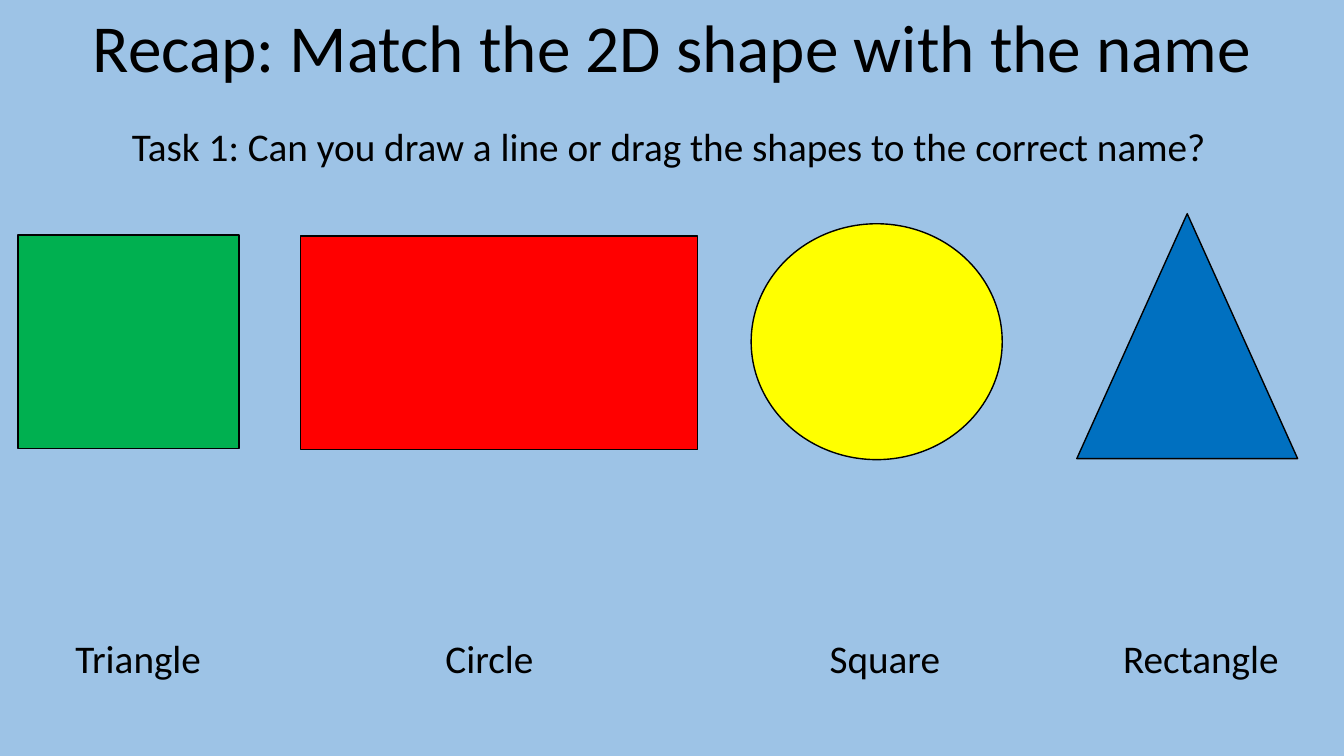
from dataclasses import dataclass

from pptx import Presentation
from pptx.dml.color import RGBColor
from pptx.enum.shapes import MSO_SHAPE
from pptx.enum.text import MSO_ANCHOR, MSO_AUTO_SIZE, PP_ALIGN
from pptx.util import Inches, Pt


@dataclass(frozen=True)
class Theme:
    font: str = "Calibri"
    title_size: int = 48
    text_size: int = 28
    outline_width: int = 1
    background: str = "9DC3E6"
    ink: str = "000000"
    green: str = "00B050"
    red: str = "FF0000"
    yellow: str = "FFFF00"
    blue: str = "0070C0"


class SlideBuilder:
    def __init__(self, slide, theme):
        self.slide = slide
        self.theme = theme

    def paint_background(self):
        fill = self.slide.background.fill
        fill.solid()
        fill.fore_color.rgb = RGBColor.from_string(self.theme.background)

    def set_text(self, holder, text, size, align, wrap):
        frame = holder.text_frame
        frame.text = text
        frame_format = {
            "word_wrap": wrap,
            "auto_size": MSO_AUTO_SIZE.SHAPE_TO_FIT_TEXT,
            "vertical_anchor": MSO_ANCHOR.TOP,
        }
        for name, value in frame_format.items():
            setattr(frame, name, value)
        paragraph = frame.paragraphs[0]
        paragraph.alignment = align
        font = paragraph.runs[0].font
        for name, value in {"name": self.theme.font, "size": Pt(size)}.items():
            setattr(font, name, value)
        font.color.rgb = RGBColor.from_string(self.theme.ink)

    def title(self, text, left, top, width, height):
        heading = self.slide.shapes.title
        position = {"left": left, "top": top, "width": width, "height": height}
        for name, value in position.items():
            setattr(heading, name, Inches(value))
        self.set_text(heading, text, self.theme.title_size, PP_ALIGN.CENTER, False)

    def label(self, text, left, top, width, height=0.57):
        box = self.slide.shapes.add_textbox(*map(Inches, (left, top, width, height)))
        self.set_text(box, text, self.theme.text_size, PP_ALIGN.LEFT, True)

    def figure(self, kind, color, left, top, width, height):
        figure = self.slide.shapes.add_shape(
            kind, *map(Inches, (left, top, width, height)))
        figure.shadow.inherit = False
        figure.fill.solid()
        figure.fill.fore_color.rgb = RGBColor.from_string(color)
        figure.line.color.rgb = RGBColor.from_string(self.theme.ink)
        figure.line.width = Pt(self.theme.outline_width)


def main():
    deck = Presentation()
    deck.slide_width, deck.slide_height = Inches(13.33), Inches(7.5)
    theme = Theme()
    recap = SlideBuilder(deck.slides.add_slide(deck.slide_layouts[5]), theme)
    recap.paint_background()

    # Heading and task
    recap.title("Recap: Match the 2D shape with the name", 0.76, 0, 11.82, 0.91)
    recap.label("Task 1: Can you draw a line or drag the shapes to the correct name?",
                1.21, 1.16, 11.42)

    # Shapes to match
    figures = [
        (MSO_SHAPE.RECTANGLE, theme.green, 0.18, 2.33, 2.19, 2.12),
        (MSO_SHAPE.RECTANGLE, theme.red, 2.98, 2.34, 3.94, 2.12),
        (MSO_SHAPE.OVAL, theme.yellow, 7.45, 2.22, 2.49, 2.34),
        (MSO_SHAPE.ISOSCELES_TRIANGLE, theme.blue, 10.68, 2.12, 2.19, 2.43),
    ]
    for figure in figures:
        recap.figure(*figure)

    # Names in one row
    names_top = 6.24
    names = [("Triangle", 0.65, 2.58), ("Circle", 4.32, 1.26),
             ("Square", 8.13, 1.97), ("Rectangle", 11.04, 2.25)]
    for name, left, width in names:
        recap.label(name, left, names_top, width)

    deck.save("out.pptx")


if __name__ == "__main__":
    main()
